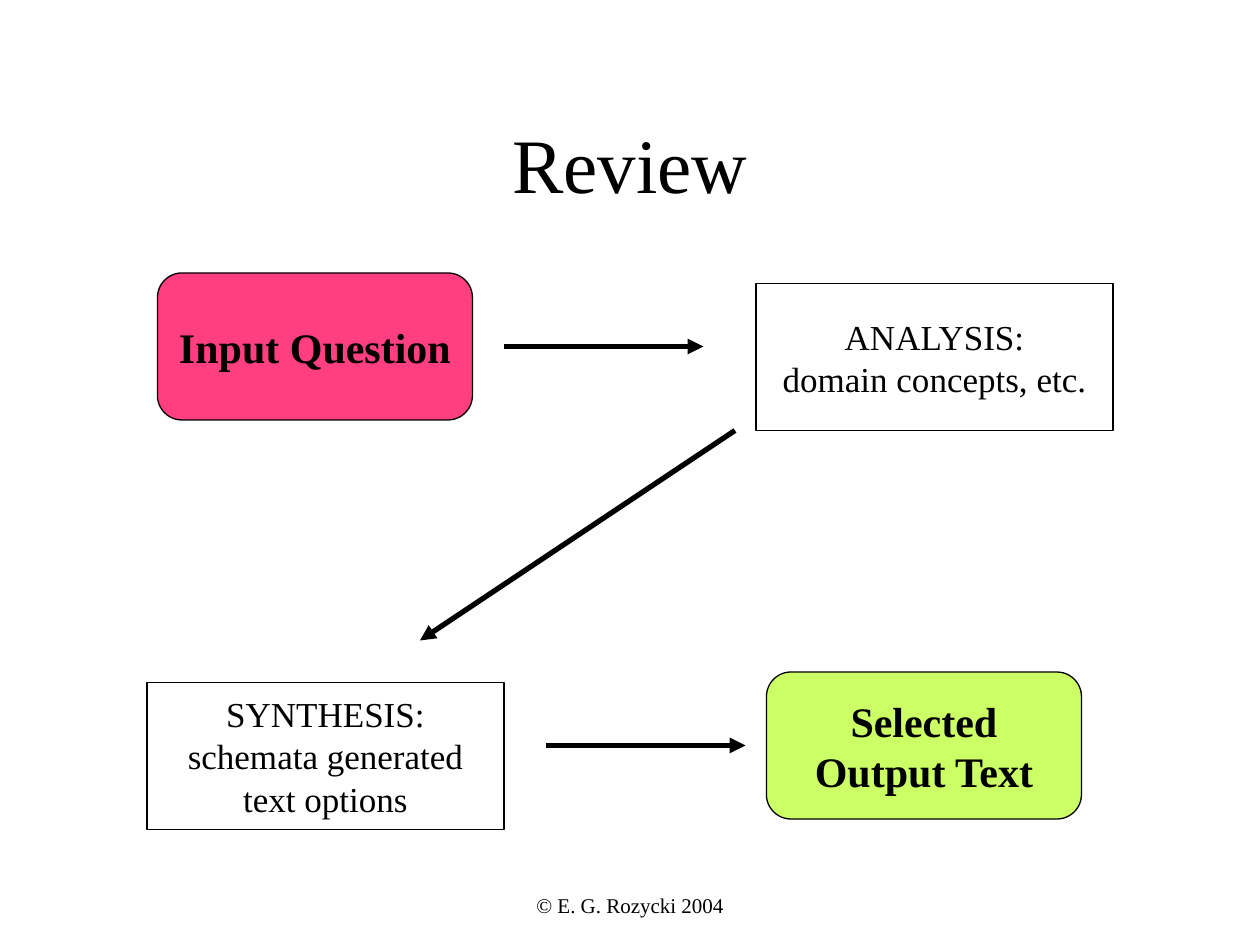
from dataclasses import dataclass

from lxml import etree
from pptx import Presentation
from pptx.dml.color import RGBColor
from pptx.enum.shapes import MSO_CONNECTOR, MSO_SHAPE
from pptx.enum.text import MSO_ANCHOR, PP_ALIGN
from pptx.oxml.ns import qn
from pptx.util import Pt

STRAIGHT = MSO_CONNECTOR.STRAIGHT
RECTANGLE = MSO_SHAPE.RECTANGLE
ROUNDED = MSO_SHAPE.FLOWCHART_ALTERNATE_PROCESS
MIDDLE, BOTTOM = MSO_ANCHOR.MIDDLE, MSO_ANCHOR.BOTTOM
CENTER = PP_ALIGN.CENTER


@dataclass(frozen=True)
class Theme:
    font: str = "Times New Roman"
    ink: RGBColor = RGBColor(0x00, 0x00, 0x00)
    paper: RGBColor = RGBColor(0xFF, 0xFF, 0xFF)
    question: RGBColor = RGBColor(0xFF, 0x3F, 0x80)
    output: RGBColor = RGBColor(0xCC, 0xFF, 0x66)
    title_size: int = 44
    endpoint_size: int = 24
    step_size: int = 20
    footer_size: int = 12
    outline: float = 0.75
    arrow: float = 3


THEME = Theme()


def write(frame, text, size, anchor=MIDDLE, bold=False, wrap=True):
    """Fill a text frame with one centred paragraph; newlines become line breaks."""
    frame.word_wrap = wrap
    frame.vertical_anchor = anchor
    para = frame.paragraphs[0]
    para.text = text
    para.alignment = CENTER
    para.font.name = THEME.font
    para.font.size = Pt(size)
    para.font.bold = bold
    para.font.color.rgb = THEME.ink


def add_label(page, box, text, size, anchor=MIDDLE):
    label = page.shapes.add_textbox(*map(Pt, box))
    write(label.text_frame, text, size, anchor)


def add_node(page, box, kind, text, fill, size, bold=False):
    node = page.shapes.add_shape(kind, *map(Pt, box))
    node.shadow.inherit = False
    node.fill.solid()
    node.fill.fore_color.rgb = fill
    node.line.color.rgb = THEME.ink
    node.line.width = Pt(THEME.outline)
    write(node.text_frame, text, size, bold=bold, wrap=False)


def add_endpoint(page, left, top, text, fill):
    """Place the rounded box that opens or closes the process."""
    add_node(page, (left, top, 180, 84), ROUNDED, text, fill,
             THEME.endpoint_size, bold=True)


def add_step(page, left, top, text):
    """Place the plain box of an intermediate step."""
    add_node(page, (left, top, 204, 84), RECTANGLE, text, THEME.paper,
             THEME.step_size)


def add_arrow(page, start, end):
    arrow = page.shapes.add_connector(STRAIGHT, *map(Pt, start + end))
    arrow.line.color.rgb = THEME.ink
    arrow.line.width = Pt(THEME.arrow)
    etree.SubElement(arrow.line._get_or_add_ln(), qn("a:tailEnd"), type="triangle")
    etree.SubElement(arrow._element.spPr, qn("a:effectLst"))


def add_process(page, left, top):
    """Place the four stages and the arrows that lead through them."""
    add_endpoint(page, left + 6, top, "Input Question", THEME.question)
    add_step(page, left + 348, top + 6, "ANALYSIS:\ndomain concepts, etc.")
    add_step(page, left, top + 234,
             "SYNTHESIS:\nschemata generated\ntext options")
    add_endpoint(page, left + 354, top + 228, "Selected\nOutput Text", THEME.output)

    routes = [((204, 42), (318, 42)),
              ((336, 90), (156, 210)),
              ((228, 270), (342, 270))]
    for (x1, y1), (x2, y2) in routes:
        add_arrow(page, (left + x1, top + y1), (left + x2, top + y2))


def main():
    deck = Presentation()
    deck.slide_width, deck.slide_height = Pt(720), Pt(540)
    page = deck.slides.add_slide(deck.slide_layouts[6])
    add_label(page, (54, 48, 612, 90), "Review", THEME.title_size)
    add_process(page, 84, 156)
    add_label(page, (246, 492, 228, 36), "© E. G. Rozycki 2004",
              THEME.footer_size, BOTTOM)
    deck.save("out.pptx")


if __name__ == "__main__":
    main()
